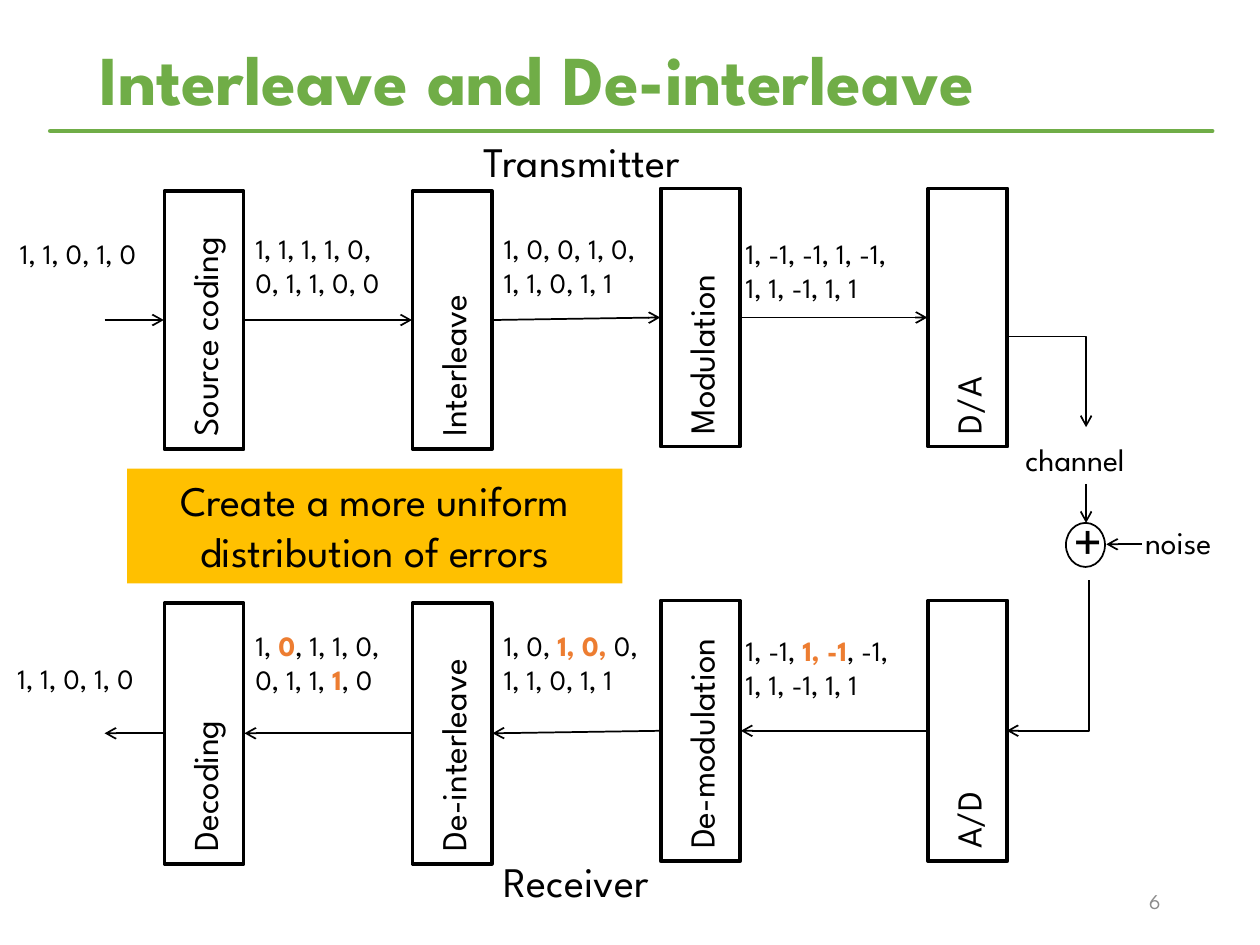
from dataclasses import dataclass

from lxml import etree
from pptx import Presentation
from pptx import util as u
from pptx.dml.color import RGBColor
from pptx.enum import shapes, text
from pptx.oxml.ns import qn


@dataclass(frozen=True)
class Theme:
    font: str = "League Spartan"
    green: str = "70AD47"
    black: str = "000000"
    white: str = "FFFFFF"
    error: str = "ED7D31"
    callout: str = "FFC000"
    gray: str = "8C8C8C"
    title: int = 40
    plus: int = 32
    heading: int = 24
    block: int = 20
    label: int = 18
    bits: int = 16
    number: int = 12


class Canvas:
    def __init__(self, slide, theme):
        self.slide = slide
        self.theme = theme

    def fill_text(self, sp, content, size, color=None, bold=False, wrap=False,
                  align=text.PP_ALIGN.LEFT, anchor=text.MSO_ANCHOR.TOP):
        """Set the content; parts between asterisks are marked as bit errors."""
        tf = sp.text_frame
        tf.word_wrap = wrap
        tf.vertical_anchor = anchor
        p = tf.paragraphs[0]
        p.alignment = align
        for i, part in enumerate(content.split("*")):
            marked = i % 2 == 1
            for j, line in enumerate(part.split("\n")):
                if j:
                    p.add_line_break()
                r = p.add_run()
                r.text = line
                r.font.name = self.theme.font
                r.font.size = u.Pt(size)
                r.font.bold = bold or marked
                r.font.color.rgb = RGBColor.from_string(
                    self.theme.error if marked else color or self.theme.black)
        return p

    def text(self, box, content, size, **style):
        sp = self.slide.shapes.add_textbox(*map(u.Inches, box))
        return self.fill_text(sp, content, size, **style)

    def shape(self, kind, box, fill=None, line=None):
        sp = self.slide.shapes.add_shape(kind, *map(u.Inches, box))
        sp.shadow.inherit = False
        if fill:
            sp.fill.solid()
            sp.fill.fore_color.rgb = RGBColor.from_string(fill)
        else:
            sp.fill.background()
        if line:
            sp.line.color.rgb = RGBColor.from_string(self.theme.black)
            sp.line.width = u.Pt(line)
        else:
            sp.line.fill.background()
        return sp

    def block(self, cx, cy, length, name):
        """A box turned on its side, centred on (cx, cy)."""
        thick = 0.63
        box = cx - length / 2, cy - thick / 2, length, thick
        sp = self.shape(shapes.MSO_SHAPE.RECTANGLE, box, line=2)
        sp.rotation = 270
        self.fill_text(sp, name, self.theme.block, anchor=text.MSO_ANCHOR.MIDDLE)

    def line(self, start, end, color=None, width=1, arrow="tailEnd", elbow=False):
        kind = shapes.MSO_CONNECTOR.ELBOW if elbow else shapes.MSO_CONNECTOR.STRAIGHT
        c = self.slide.shapes.add_connector(kind, *map(u.Inches, start + end))
        c.line.color.rgb = RGBColor.from_string(color or self.theme.black)
        c.line.width = u.Pt(width)
        props = c._element.spPr
        if elbow:  # a single corner: across, then up or down
            props.find(qn("a:prstGeom")).set("prst", "bentConnector2")
        if arrow:
            etree.SubElement(props.find(qn("a:ln")), qn("a:" + arrow), type="arrow")
        etree.SubElement(props, qn("a:effectLst"))
        return c


def main():
    prs = Presentation()
    prs.slide_width, prs.slide_height = u.Inches(10), u.Inches(7.5)
    t = Theme()
    s = Canvas(prs.slides.add_slide(prs.slide_layouts[6]), t)
    middle = text.MSO_ANCHOR.MIDDLE

    # Title and rule
    rule = s.line((0.4, 1.04), (9.62, 1.04), t.green, 2.75, arrow=None)
    rule._element.spPr.find(qn("a:ln")).set("cap", "rnd")
    p = s.text((0.69, 0.29, 8.62, 0.74), "Interleave and De-interleave", t.title,
               color=t.green, bold=True, wrap=True, anchor=middle)
    p.line_spacing = 0.9

    # Both chains: blocks, then the arrows between neighbouring blocks
    centers = [1.62, 3.59, 5.56, 7.68]
    half = 0.32
    chains = [
        (2.54, 2.05, False, ["Source coding", "Interleave", "Modulation", "D/A"]),
        (5.82, 2.07, True, ["Decoding", "De-interleave", "De-modulation", "A/D"]),
    ]
    for y, length, backwards, names in chains:
        levels = [y, y, y - 0.02, y - 0.02]
        for cx, cy, name in zip(centers, levels, names):
            s.block(cx, cy, length, name)
        exits = [(0.83, y)] + [(cx + half, cy) for cx, cy in zip(centers, levels)]
        entries = [(cx - half, cy) for cx, cy in zip(centers, levels)]
        for start, end in zip(exits, entries):
            if backwards:
                start, end = end, start
            s.line(start, end)

    # Bit sequences
    for x, y, w, h, bits in [
        (0.06, 1.83, 1.32, 0.37, "1, 1, 0, 1, 0"),
        (1.93, 1.79, 1.38, 0.64, "1, 1, 1, 1, 0, \n0, 1, 1, 0, 0"),
        (3.9, 1.79, 1.38, 0.64, "1, 0, 0, 1, 0, \n1, 1, 0, 1, 1"),
        (5.82, 1.83, 1.61, 0.64, "1, -1, -1, 1, -1, \n1, 1, -1, 1, 1"),
        (0.04, 5.2, 1.32, 0.37, "1, 1, 0, 1, 0"),
        (1.93, 4.94, 1.44, 0.64, "1, *0*, 1, 1, 0, \n0, 1, 1, *1*, 0"),
        (3.9, 4.94, 1.44, 0.64, "1, 0, *1, 0, *0, \n1, 1, 0, 1, 1"),
        (5.82, 4.98, 1.69, 0.64, "1, -1, *1, -1*, -1, \n1, 1, -1, 1, 1"),
    ]:
        s.text((x, y, w, h), bits, t.bits)

    # Channel with added noise
    s.line((7.99, 2.67), (8.62, 3.39), elbow=True)
    s.text((8.04, 3.44, 1.02, 0.4), "channel", t.label)
    s.line((8.62, 3.84), (8.62, 4.15))
    s.shape(shapes.MSO_SHAPE.OVAL, (8.46, 4.15, 0.31, 0.35), fill=t.white, line=1)
    s.text((8.42, 3.96, 0.43, 0.64), "+", t.plus)
    s.line((9.06, 4.32), (8.78, 4.32))
    s.text((8.99, 4.1, 0.76, 0.4), "noise", t.label)
    s.line((7.99, 5.8), (8.64, 4.6), arrow="headEnd", elbow=True)

    # Chain headings, callout and slide number
    s.text((3.74, 1.03, 1.83, 0.5), "Transmitter", t.heading)
    s.text((3.9, 6.74, 1.39, 0.5), "Receiver", t.heading)
    callout = s.shape(shapes.MSO_SHAPE.RECTANGLE, (1.01, 3.72, 3.93, 0.91), fill=t.callout)
    s.fill_text(callout, "Create a more uniform distribution of errors", t.heading,
                wrap=True, align=text.PP_ALIGN.CENTER)
    s.text((7.06, 6.95, 2.25, 0.4), "6", t.number, color=t.gray, wrap=True,
           align=text.PP_ALIGN.RIGHT, anchor=middle)

    prs.save("out.pptx")


if __name__ == "__main__":
    main()
